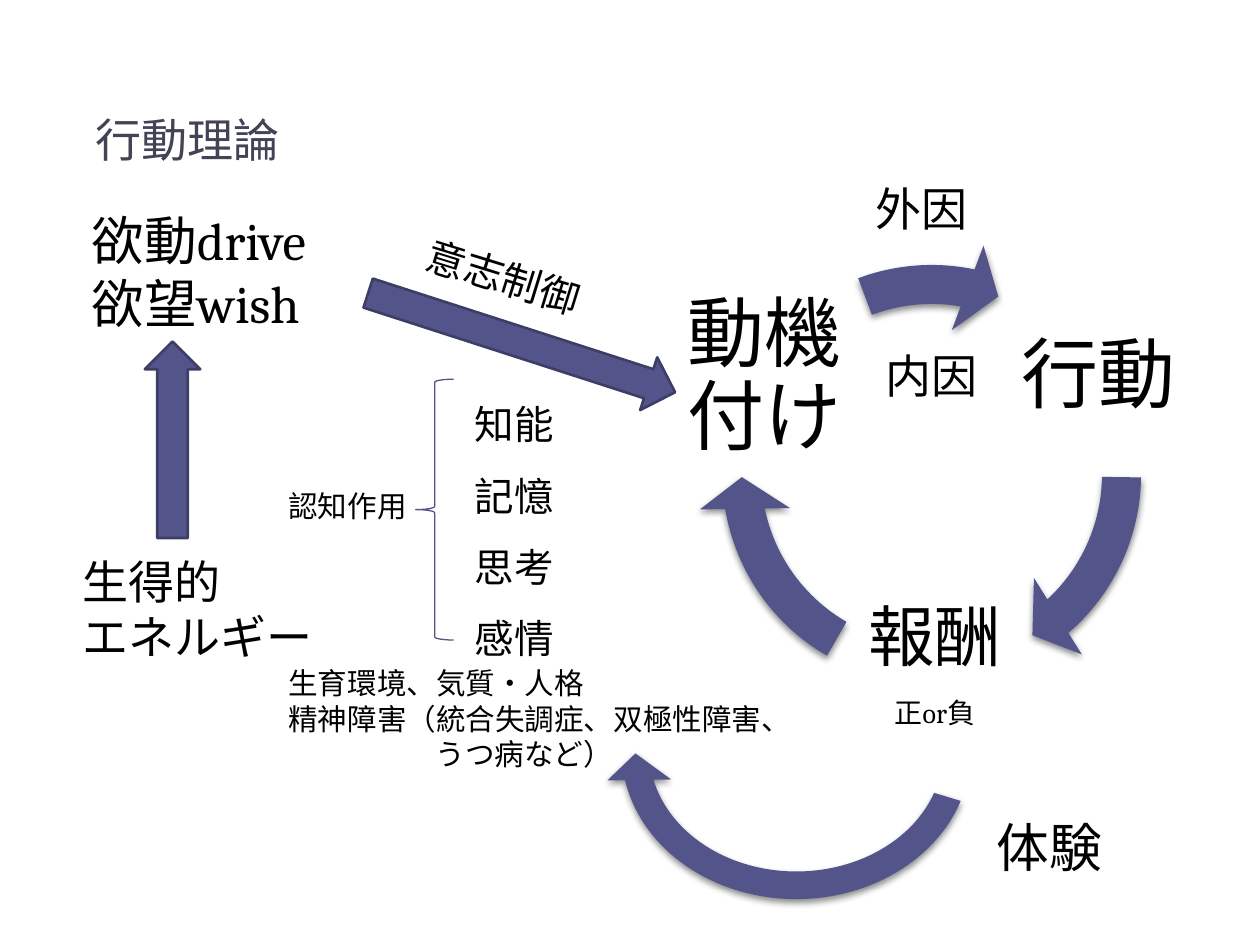
from lxml import etree
from pptx import Presentation
from pptx.dml.color import RGBColor
from pptx.enum.shapes import MSO_SHAPE
from pptx.enum.text import MSO_ANCHOR, MSO_AUTO_SIZE, PP_ALIGN
from pptx.oxml.ns import qn
from pptx.util import Inches, Pt

CIRCULAR, RIGHT, BRACE = MSO_SHAPE.CIRCULAR_ARROW, MSO_SHAPE.RIGHT_ARROW, MSO_SHAPE.LEFT_BRACE
TOP, MIDDLE = MSO_ANCHOR.TOP, MSO_ANCHOR.MIDDLE
GROW, FIXED = MSO_AUTO_SIZE.SHAPE_TO_FIT_TEXT, MSO_AUTO_SIZE.NONE
LEFT, CENTER = PP_ALIGN.LEFT, PP_ALIGN.CENTER

COLORS = {"title": "424456", "text": "000000", "arrow": "53548A", "edge": "3D3E66", "shadow": "000000"}
LABEL = {"word_wrap": False, "auto_size": GROW, "vertical_anchor": TOP}
TITLE = {"word_wrap": True, "auto_size": FIXED, "vertical_anchor": MIDDLE}
CYCLE = {**TITLE, **dict.fromkeys(("margin_left", "margin_right", "margin_top", "margin_bottom"), Inches(0.06))}


def color(name):
    return RGBColor.from_string(COLORS[name])


def add_text(place, lines, frame_format, para_format, font="Cambria", ink="text", rotation=0):
    box = page.shapes.add_textbox(*map(Inches, place))
    box.rotation = rotation
    frame = box.text_frame
    for name, value in frame_format.items():
        setattr(frame, name, value)
    for index, (words, size) in enumerate(lines):
        para = frame.paragraphs[0] if index == 0 else frame.add_paragraph()
        for name, value in para_format.items():
            setattr(para, name, value)
        if para_format.get("alignment") == CENTER:
            para.space_after = Pt(round(size * 0.35, 1))
        span = para.add_run()
        span.text = words
        for name, value in {"name": font, "size": Pt(size)}.items():
            setattr(span.font, name, value)
        span.font.color.rgb = color(ink)
    return box


deck = Presentation()
deck.slide_width, deck.slide_height = Inches(10), Inches(7.5)
page = deck.slides.add_slide(deck.slide_layouts[6])

add_text((0.66, 0.81, 2.62, 0.59), [("行動理論", 26.3)], TITLE, {"alignment": LEFT}, "Roboto", "title")

cycle_steps = [
    ((7.93, 2.21, 1.58, 1.58), [("行動", 44)]),
    ((6.63, 4.5, 1.58, 1.58), [("報酬", 38), ("正or負", 16)]),
    ((5.28, 2.21, 1.58, 1.58), [("動機付け", 44)]),
]
for place, lines in cycle_steps:
    add_text(place, lines, CYCLE, {"alignment": CENTER, "line_spacing": 0.9})

curved_arrows = [
    ((5.53, 1.9, 3.73, 3.73), 29.008, 0.509),
    ((5.53, 1.9, 3.73, 3.73), 101.726, 72.002),
    ((5.53, 1.9, 3.73, 3.73), 168.554, 149.682),
    ((4.79, 4.64, 3.06, 2.64), 101.709, 10.149),
]
for place, end, start in curved_arrows:
    arrow = page.shapes.add_shape(CIRCULAR, *map(Inches, place))
    for index, value in enumerate((0.083, 5.764, end, start, 0.096)):
        arrow.adjustments[index] = value
    arrow.fill.solid()
    arrow.fill.fore_color.rgb = color("arrow")
    arrow.line.fill.background()
    arrow.shadow.inherit = False
    effects = arrow.element.spPr.find(qn("a:effectLst"))
    shadow = etree.SubElement(effects, qn("a:outerShdw"), blurRad=str(Pt(4)), dist=str(Pt(2)),
                              dir="5400000", rotWithShape="0")
    tint = etree.SubElement(shadow, qn("a:srgbClr"), val=COLORS["shadow"])
    etree.SubElement(tint, qn("a:alpha"), val="45000")

for place, rotation in [((2.86, 2.5, 2.56, 0.44), 17.9), ((0.59, 3.27, 1.56, 0.44), 270)]:
    arrow = page.shapes.add_shape(RIGHT, *map(Inches, place))
    arrow.rotation = rotation
    arrow.adjustments[0] = 0.55
    arrow.adjustments[1] = 0.5
    arrow.fill.solid()
    arrow.fill.fore_color.rgb = color("arrow")
    arrow.line.color.rgb = color("edge")
    arrow.line.width = Pt(1.5)
    arrow.shadow.inherit = False

brace = page.shapes.add_shape(BRACE, *map(Inches, (3.3, 3.01, 0.3, 2.07)))
brace.fill.background()
brace.line.color.rgb = color("arrow")
brace.line.width = Pt(0.75)
brace.shadow.inherit = False

labels = [
    ((0.63, 1.6, 2, 1.11), 30.1, ["欲動drive", "欲望wish"], 1, 0),
    ((2.19, 3.82, 1.15, 0.39), 16.9, ["認知作用"], 1, 0),
    ((3.67, 2.94, 0.84, 2.38), 22.6, ["知能", "記憶", "思考", "感情"], 1.5, 0),
    ((6.85, 1.38, 0.94, 0.54), 26.3, ["外因"], 1, 0),
    ((0.56, 4.34, 2.05, 0.99), 26.3, ["生得的", "エネルギー"], 1, 0),
    ((7.81, 6.42, 1.05, 0.61), 30.1, ["体験"], 1, 0),
    ((6.93, 2.71, 0.94, 0.54), 26.3, ["内因"], 1, 0),
    ((3.27, 1.96, 1.47, 0.48), 22.6, ["意志制御"], 1, 17.2),
]
for place, size, lines, spacing, rotation in labels:
    add_text(place, [(words, size) for words in lines], LABEL, {"line_spacing": spacing}, rotation=rotation)

factors = ["生育環境、気質・人格", "精神障害（統合失調症、双極性障害、", "うつ病など）"]
factor_box = add_text((2.19, 5.23, 4.23, 0.96), [(words, 16.9) for words in factors], LABEL, {"alignment": LEFT})
last_para = factor_box.text_frame.paragraphs[-1]
last_para._p.get_or_add_pPr().set("marL", str(Inches(1.17)))

deck.save("out.pptx")
